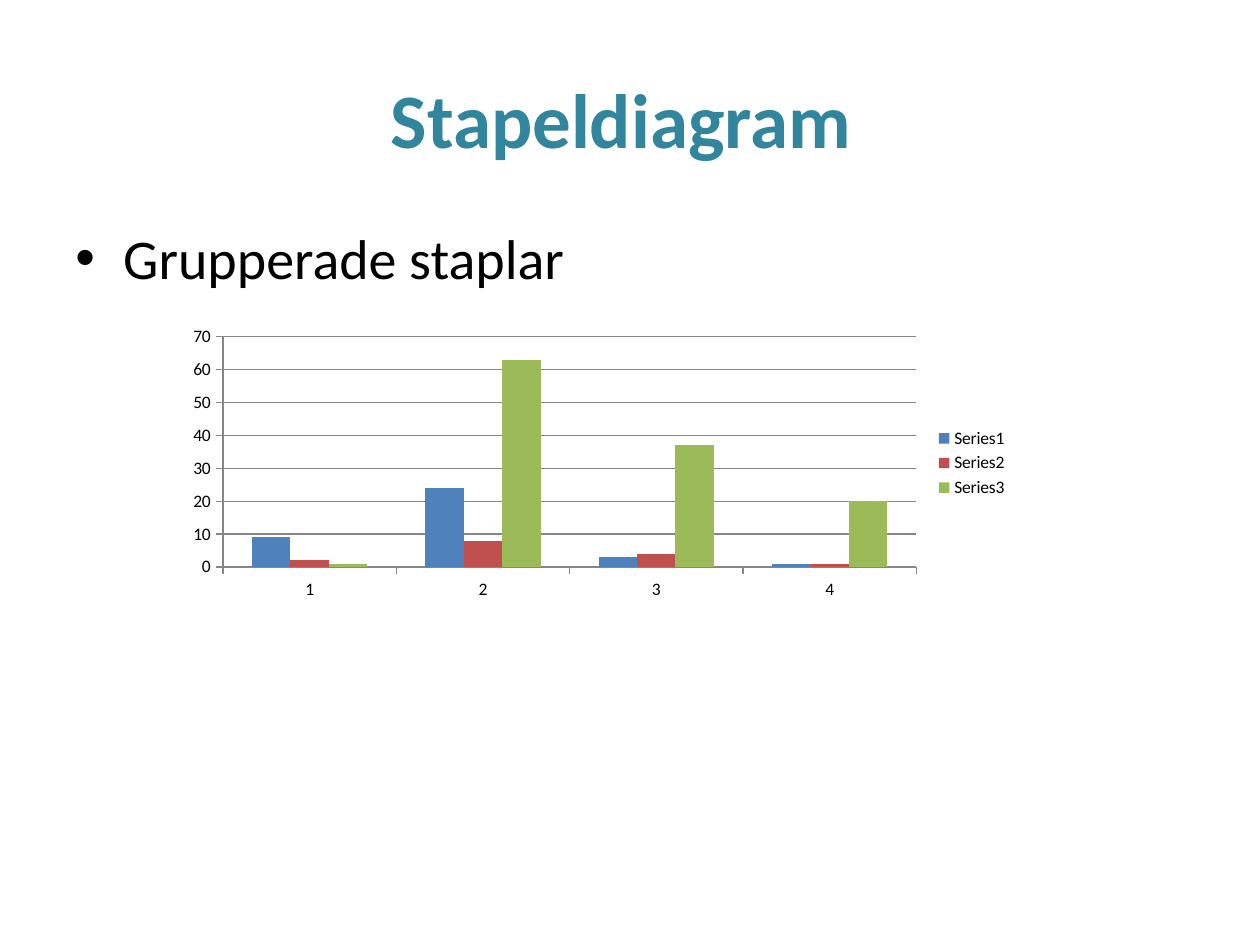
import pptx
import pptx.util
import pptx.chart.data
import pptx.dml.color
import pptx.enum.chart
import pptx.enum.text
import pptx.oxml
import pptx.oxml.ns

Inches, Pt = pptx.util.Inches, pptx.util.Pt
RGBColor = pptx.dml.color.RGBColor

TEAL = RGBColor(0x31, 0x85, 0x9C)
BLACK = RGBColor(0, 0, 0)
GRAY = RGBColor(0x86, 0x86, 0x86)
FONT = "Calibri"

TITLE = "Stapeldiagram "
BULLETS = ["Grupperade staplar"]
CATEGORIES = ["1", "2", "3", "4"]
SERIES = [
    ("Series1", (9, 24, 3, 1), RGBColor(0x4F, 0x81, 0xBD)),
    ("Series2", (2, 8, 4, 1), RGBColor(0xC0, 0x50, 0x4D)),
    ("Series3", (1, 63, 37, 20), RGBColor(0x9B, 0xBB, 0x59)),
]

WIDTH, HEIGHT = Inches(10), Inches(7.5)
MARGIN = 0.05
TITLE_BOX = (MARGIN, 0.04, 1 - 2 * MARGIN, 0.17)
BODY_BOX = (MARGIN, 0.23, 1 - 2 * MARGIN, 0.72)
CHART_BOX = (0.14, 0.34, 0.67, 0.3)


def place(box):
    return [int(share * side) for share, side in zip(box, (WIDTH, HEIGHT) * 2)]


def style(font, size, color, bold=False):
    font.name, font.size, font.bold = FONT, Pt(size), bold
    font.color.rgb = color


def add_title(s):
    sp = s.shapes.title
    sp.left, sp.top, sp.width, sp.height = place(TITLE_BOX)
    tf = sp.text_frame
    tf.vertical_anchor = pptx.enum.text.MSO_ANCHOR.MIDDLE
    p = tf.paragraphs[0]
    p.alignment = pptx.enum.text.PP_ALIGN.CENTER
    r = p.add_run()
    r.text = TITLE
    style(r.font, 44, TEAL, True)


def add_bullets(s):
    tf = s.shapes.add_textbox(*place(BODY_BOX)).text_frame
    tf.word_wrap = True
    for i, text in enumerate(BULLETS):
        p = tf.add_paragraph() if i else tf.paragraphs[0]
        p.space_before = Pt(6.4)
        r = p.add_run()
        r.text = text
        style(r.font, 32, BLACK)
        pPr = p._p.get_or_add_pPr()
        pPr.set("marL", str(Inches(0.38)))
        pPr.set("indent", str(-Inches(0.38)))
        ns = pptx.oxml.ns.nsdecls("a")
        pPr.append(pptx.oxml.parse_xml(f'<a:buFont {ns} typeface="Arial"/>'))
        pPr.append(pptx.oxml.parse_xml(f'<a:buChar {ns} char="•"/>'))


def add_columns(s):
    data = pptx.chart.data.CategoryChartData()
    data.categories = CATEGORIES
    for name, values, _ in SERIES:
        data.add_series(name, values)
    kind = pptx.enum.chart.XL_CHART_TYPE.COLUMN_CLUSTERED
    chart = s.shapes.add_chart(kind, *place(CHART_BOX), data).chart
    style(chart.font, 10, BLACK)
    chart.has_title = False
    chart.has_legend = True
    chart.legend.position = pptx.enum.chart.XL_LEGEND_POSITION.RIGHT
    chart.legend.include_in_layout = False
    plot = chart.plots[0]
    plot.vary_by_categories = False
    plot.gap_width, plot.overlap = 150, 0
    for series, (_, _, color) in zip(plot.series, SERIES):
        series.format.fill.solid()
        series.format.fill.fore_color.rgb = color
    for axis in (chart.category_axis, chart.value_axis):
        axis.major_tick_mark = pptx.enum.chart.XL_TICK_MARK.OUTSIDE
        axis.format.line.color.rgb = GRAY
        axis.format.line.width = Pt(0.75)
    axis = chart.value_axis
    axis.minimum_scale, axis.maximum_scale, axis.major_unit = 0, 70, 10
    axis.has_major_gridlines = True
    axis.major_gridlines.format.line.color.rgb = GRAY
    axis.major_gridlines.format.line.width = Pt(0.75)


def main():
    prs = pptx.Presentation()
    prs.slide_width, prs.slide_height = WIDTH, HEIGHT
    s = prs.slides.add_slide(prs.slide_layouts[5])
    add_title(s)
    add_bullets(s)
    add_columns(s)
    prs.save("out.pptx")


if __name__ == "__main__":
    main()
